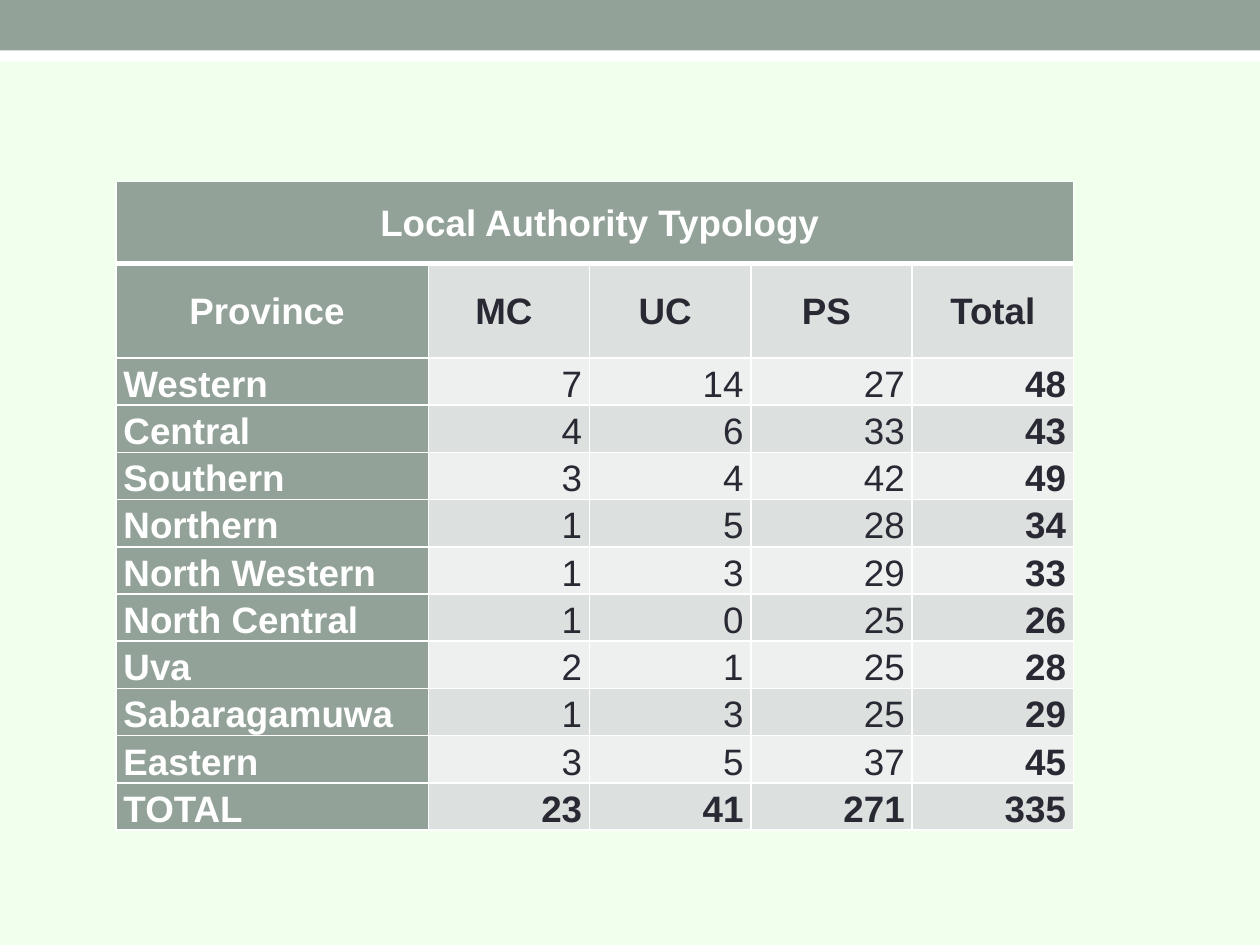
from dataclasses import dataclass

from lxml import etree
from pptx import Presentation
from pptx.dml.color import RGBColor
from pptx.enum import shapes, text
from pptx.oxml import ns
from pptx.util import Inches, Pt


@dataclass(frozen=True)
class Theme:
    sage: str = "93A299"
    white: str = "FFFFFF"
    ink: str = "292934"
    background: str = "F1FFED"
    band_dark: str = "DCE0DE"
    band_light: str = "EEF0EF"
    font: str = "Arial"
    size: float = 21
    line_spacing: float = 1.07
    rule: float = 1
    heavy_rule: float = 3


@dataclass(frozen=True)
class Province:
    name: str
    mc: int
    uc: int
    ps: int

    def row(self) -> list:
        return [self.name, self.mc, self.uc, self.ps, self.mc + self.uc + self.ps]


@dataclass(frozen=True)
class Band:
    top: float
    height: float
    color: str


THEME = Theme()
BANDS = [Band(0.24, 0.25, THEME.white), Band(0, 0.4, THEME.sage)]
HEADINGS = ["Province ", "MC ", "UC ", "PS ", "Total"]
PROVINCES = [
    Province("Western", 7, 14, 27),
    Province("Central", 4, 6, 33),
    Province("Southern", 3, 4, 42),
    Province("Northern", 1, 5, 28),
    Province("North Western", 1, 3, 29),
    Province("North Central", 1, 0, 25),
    Province("Uva", 2, 1, 25),
    Province("Sabaragamuwa", 1, 3, 25),
    Province("Eastern", 3, 5, 37),
]
COLUMN_WIDTHS = [2.48] + [1.28] * 4
ROW_HEIGHTS = [0.65, 0.75] + [0.375] * (len(PROVINCES) + 1)


def write(frame, words: str, *, color: str, bold: bool, align) -> None:
    """Put one formatted paragraph into a text frame."""
    paragraph = frame.paragraphs[0]
    paragraph.alignment = align
    paragraph.line_spacing = THEME.line_spacing
    run = paragraph.add_run()
    run.text = words
    run.font.name = THEME.font
    run.font.size = Pt(THEME.size)
    run.font.bold = bold
    run.font.color.rgb = RGBColor.from_string(color)


def draw_band(slide, band: Band, width: int) -> None:
    bar = slide.shapes.add_shape(shapes.MSO_SHAPE.RECTANGLE, 0, Inches(band.top),
                                 width, Inches(band.height))
    bar.shadow.inherit = False
    bar.fill.solid()
    bar.fill.fore_color.rgb = RGBColor.from_string(band.color)
    bar.line.fill.background()


def set_borders(cell, row: int) -> None:
    """White rules all round, heavier between the caption and the headings."""
    weights = {
        "lnL": THEME.rule,
        "lnR": THEME.rule,
        "lnT": THEME.heavy_rule if row == 1 else THEME.rule,
        "lnB": THEME.heavy_rule if row == 0 else THEME.rule,
    }
    properties = cell._tc.get_or_add_tcPr()
    for position, (side, weight) in enumerate(weights.items()):
        line = etree.Element(ns.qn(f"a:{side}"), w=str(Pt(weight)))
        fill = etree.SubElement(line, ns.qn("a:solidFill"))
        etree.SubElement(fill, ns.qn("a:srgbClr"), val=THEME.white)
        properties.insert(position, line)


def format_cell(cell, row: int, fill: str) -> None:
    cell.margin_left = cell.margin_right = Inches(0.06)
    cell.margin_top = cell.margin_bottom = 0
    cell.vertical_anchor = text.MSO_ANCHOR.MIDDLE if row < 2 else text.MSO_ANCHOR.BOTTOM
    cell.fill.solid()
    cell.fill.fore_color.rgb = RGBColor.from_string(fill)
    set_borders(cell, row)


def draw_typology(slide, rows: list) -> None:
    table = slide.shapes.add_table(
        len(rows), len(HEADINGS), Inches(0.92), Inches(1.44),
        Inches(sum(COLUMN_WIDTHS)), Inches(sum(ROW_HEIGHTS))).table
    for column, width in zip(table.columns, COLUMN_WIDTHS):
        column.width = Inches(width)
    for table_row, height in zip(table.rows, ROW_HEIGHTS):
        table_row.height = Inches(height)
    table.cell(0, 0).merge(table.cell(0, len(HEADINGS) - 1))

    last_row, last_column = len(rows) - 1, len(HEADINGS) - 1
    for r, values in enumerate(rows):
        band = THEME.band_dark if r % 2 else THEME.band_light
        for c in range(len(HEADINGS)):
            label = r == 0 or c == 0
            cell = table.cell(r, c)
            format_cell(cell, r, THEME.sage if label else band)
            if c >= len(values):
                continue
            if r < 2:
                align = text.PP_ALIGN.CENTER
            else:
                align = text.PP_ALIGN.LEFT if c == 0 else text.PP_ALIGN.RIGHT
            write(cell.text_frame, str(values[c]), align=align,
                  color=THEME.white if label else THEME.ink,
                  bold=label or r in (1, last_row) or c == last_column)


def main() -> None:
    deck = Presentation()
    deck.slide_width, deck.slide_height = Inches(10), Inches(7.5)
    slide = deck.slides.add_slide(deck.slide_layouts[6])

    # Background and top bands
    slide.background.fill.solid()
    slide.background.fill.fore_color.rgb = RGBColor.from_string(THEME.background)
    for band in BANDS:
        draw_band(slide, band, deck.slide_width)

    # Table: caption, headings, provinces, sums
    provinces = [province.row() for province in PROVINCES]
    sums = [sum(column) for column in list(zip(*provinces))[1:]]
    draw_typology(slide, [[" Local Authority Typology"], HEADINGS, *provinces,
                          ["TOTAL", *sums]])

    deck.save("out.pptx")


if __name__ == "__main__":
    main()
